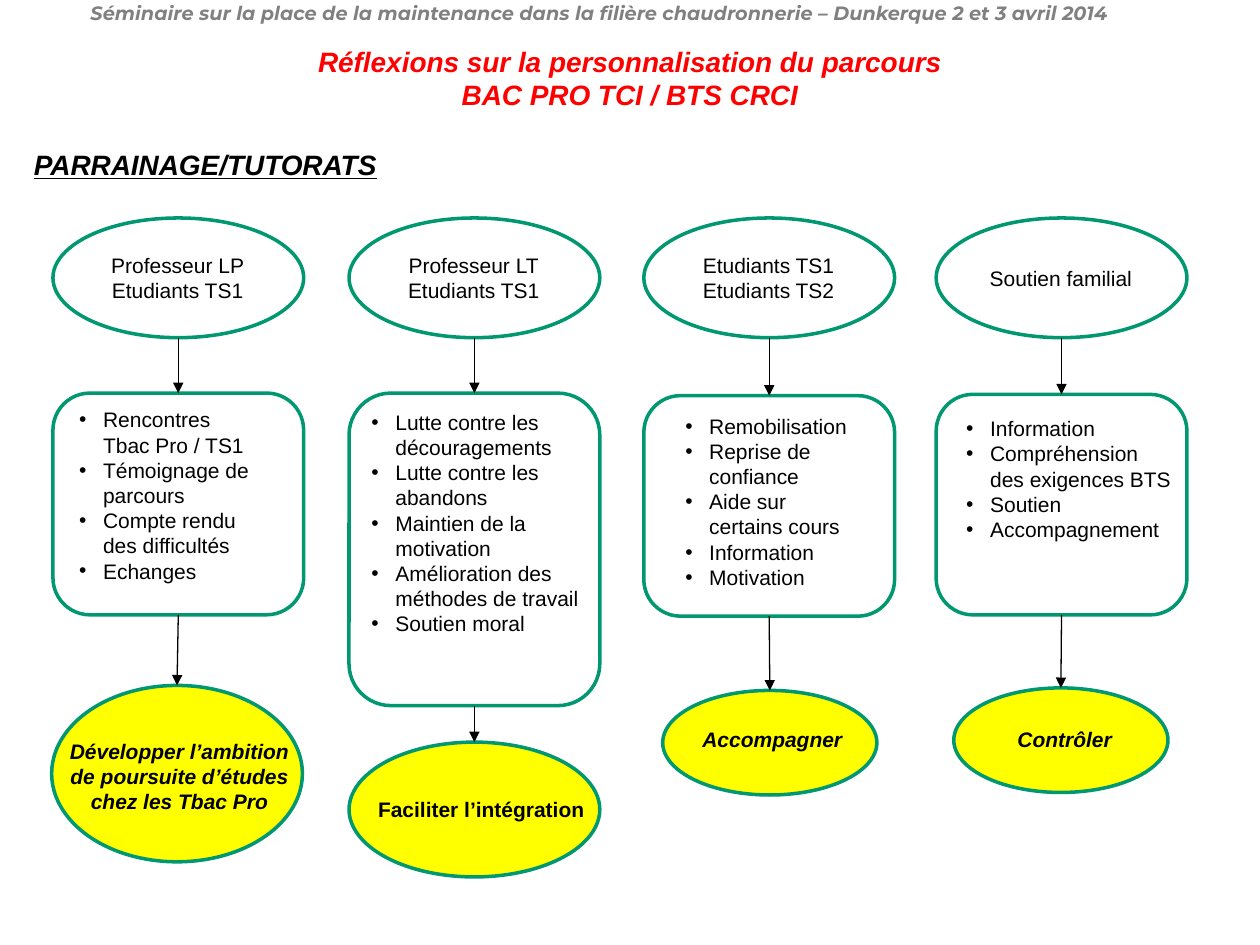
from lxml import etree
from pptx import Presentation
from pptx.dml.color import RGBColor
from pptx.enum.shapes import MSO_CONNECTOR, MSO_SHAPE
from pptx.enum.text import MSO_ANCHOR, MSO_AUTO_SIZE, PP_ALIGN
from pptx.oxml.ns import qn
from pptx.util import Inches, Pt

OVAL, ROUND = MSO_SHAPE.OVAL, MSO_SHAPE.ROUNDED_RECTANGLE
STRAIGHT = MSO_CONNECTOR.STRAIGHT
LEFT, CENTER = PP_ALIGN.LEFT, PP_ALIGN.CENTER
TOP, BOTTOM = 0, 2

BLACK = RGBColor(0, 0, 0)
WHITE = RGBColor(0xFF, 0xFF, 0xFF)
GREEN = RGBColor(0x00, 0x97, 0x71)
YELLOW = RGBColor(0xFF, 0xFF, 0)
RED = RGBColor(0xFF, 0, 0)
GRAY = RGBColor(0x80, 0x80, 0x80)

WIDE, HEAD_Y, HEAD_H = 1.99, 1.73, 0.95

# Each column: left edge, head lines, card (top, height), list box and items,
# goal oval, goal label box, text, italic and wrap
COLUMNS = [
    dict(x=0.42, head=["Professeur LP", "Etudiants TS1"], card=(3.12, 1.76),
         list=(0.53, 3.18, 1.87, 1.51),
         items=["Rencontres\vTbac Pro / TS1", "Témoignage de parcours",
                "Compte rendu\vdes difficultés", "Echanges"],
         oval=(0.41, 5.44, 1.99, 1.4), label=(0.39, 5.81, 2.07, 0.71),
         goal="Développer l’ambition de poursuite d’études chez les Tbac Pro",
         italic=True, wrap=True),
    dict(x=2.77, head=["Professeur LT", "Etudiants TS1"], card=(3.12, 2.48),
         list=(2.85, 3.2, 1.87, 1.92),
         items=["Lutte contre les découragements", "Lutte contre les abandons",
                "Maintien de la motivation",
                "Amélioration des méthodes de travail", "Soutien moral"],
         oval=(2.77, 5.89, 1.99, 1.07), label=(2.89, 6.27, 1.86, 0.3),
         goal="Faciliter l’intégration", italic=False, wrap=False),
    dict(x=5.11, head=["Etudiants TS1", "Etudiants TS2"], card=(3.14, 1.75),
         list=(5.34, 3.23, 1.58, 1.52),
         items=["Remobilisation", "Reprise de confiance",
                "Aide sur certains cours", "Information", "Motivation"],
         oval=(5.26, 5.48, 1.7, 0.83), label=(5.42, 5.72, 1.42, 0.3),
         goal="Accompagner", italic=True, wrap=True),
    dict(x=7.43, head=["Soutien familial"], card=(3.13, 1.75),
         list=(7.57, 3.25, 1.84, 1.31),
         items=["Information", "Compréhension des exigences BTS", "Soutien",
                "Accompagnement"],
         oval=(7.57, 5.46, 1.7, 0.83), label=(7.74, 5.72, 1.42, 0.3),
         goal="Contrôler", italic=True, wrap=True),
]


class Board:
    """Holds the style, the slide and the shapes now being filled."""

    def __init__(self, slide):
        self.slide = slide
        self.shapes = slide.shapes
        self.font = "Arial"
        self.size = 12

    def group(self):
        self.shapes = self.slide.shapes.add_group_shape().shapes

    def set_text(self, shape, lines, size=None, color=BLACK, bold=False,
                 italic=False, under=False, align=LEFT, wrap=True, face=None,
                 bullet=False):
        frame = shape.text_frame
        frame.word_wrap = wrap
        frame.auto_size = MSO_AUTO_SIZE.NONE
        frame.vertical_anchor = MSO_ANCHOR.TOP
        frame.text = "\n".join(lines)
        for para in frame.paragraphs:
            if bullet:
                self.bullet(para)
            para.alignment = align
            font = para.font
            font.name, font.size = face or self.font, Pt(size or self.size)
            font.bold, font.italic, font.underline = bold, italic, under
            font.color.rgb = color

    def bullet(self, para):
        props = para._p.get_or_add_pPr()
        props.set("marL", str(Inches(0.19)))
        props.set("indent", str(-Inches(0.19)))
        etree.SubElement(props, qn("a:buFont")).set("typeface", "Arial")
        etree.SubElement(props, qn("a:buChar")).set("char", "•")

    def title(self, place, lines, **style):
        shape = self.slide.shapes.title
        shape.left, shape.top, shape.width, shape.height = map(Inches, place)
        self.set_text(shape, lines, **style)

    def text(self, place, lines, **style):
        box = self.shapes.add_textbox(*map(Inches, place))
        self.set_text(box, lines, **style)

    def shape(self, kind, place, fill=WHITE):
        shape = self.shapes.add_shape(kind, *map(Inches, place))
        shape.shadow.inherit = False
        shape.fill.solid()
        shape.fill.fore_color.rgb = fill
        shape.line.color.rgb = GREEN
        shape.line.width = Pt(2)
        return shape

    def arrow(self, start, end):
        """Runs from the bottom of one shape to the top of the next."""
        line = self.shapes.add_connector(
            STRAIGHT, start.left + start.width // 2, start.top + start.height,
            end.left + end.width // 2, end.top)
        if start.auto_shape_type == ROUND:
            line.begin_connect(start, BOTTOM)
        line.end_connect(end, TOP)
        line.line.color.rgb = BLACK
        line.line.width = Pt(0.75)
        props = line._element.spPr
        etree.SubElement(props.get_or_add_ln(),
                         qn("a:tailEnd")).set("type", "triangle")
        etree.SubElement(props, qn("a:effectLst"))

    def column(self, col):
        self.group()
        x = col["x"]
        top, high = col["card"]

        # Shapes and arrows
        head = self.shape(OVAL, (x, HEAD_Y, WIDE, HEAD_H))
        card = self.shape(ROUND, (x, top, WIDE, high))
        goal = self.shape(OVAL, col["oval"], YELLOW)
        self.arrow(head, card)
        self.arrow(card, goal)

        # Texts
        tall = 0.1 + 0.2 * len(col["head"])
        mid = HEAD_Y + HEAD_H / 2
        self.text((x + 0.28, mid - tall / 2, 1.42, tall), col["head"],
                  align=CENTER)
        self.text(col["list"], col["items"], bullet=True)
        self.text(col["label"], [col["goal"]], bold=True, align=CENTER,
                  italic=col["italic"], wrap=col["wrap"])


def main():
    deck = Presentation()
    deck.slide_width, deck.slide_height = Inches(10), Inches(7.5)
    board = Board(deck.slides.add_slide(deck.slide_layouts[5]))

    # Banner, title and heading
    board.text((0.62, -0.04, 8.73, 0.29),
               ["Séminaire sur la place de la maintenance dans la filière "
                "chaudronnerie – Dunkerque 2 et 3 avril 2014"],
               size=11, color=GRAY, bold=True, italic=True, wrap=False,
               face="Montserrat")
    board.title((2.39, 0.3, 5.22, 0.64),
                ["Réflexions sur la personnalisation du parcours",
                 "BAC PRO TCI / BTS CRCI"],
                size=16, color=RED, bold=True, italic=True, align=CENTER,
                wrap=False)
    board.text((0.17, 1.12, 2.98, 0.37), ["PARRAINAGE/TUTORATS"],
               size=16, bold=True, italic=True, under=True)

    # Four support columns
    for col in COLUMNS:
        board.column(col)

    deck.save("out.pptx")


if __name__ == "__main__":
    main()
